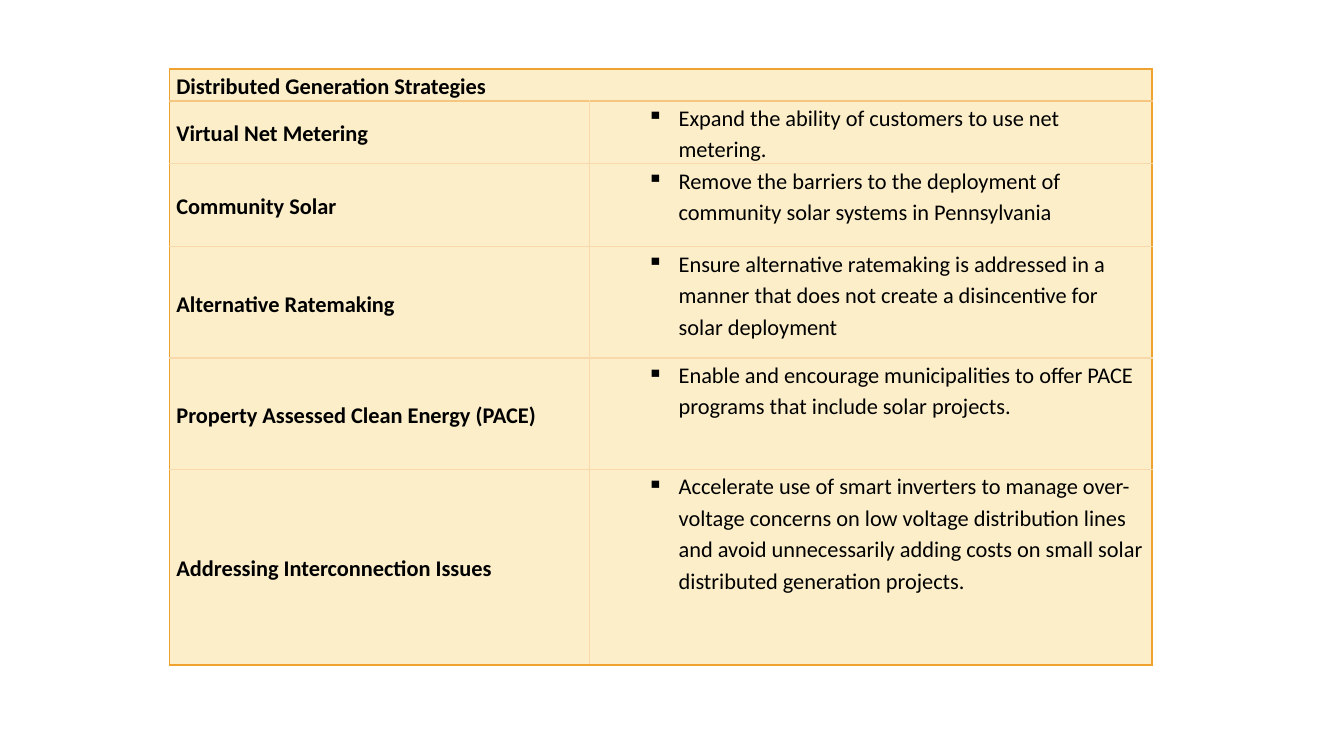
from lxml import etree
from pptx import Presentation
from pptx.dml.color import RGBColor
from pptx.enum import text
from pptx.oxml import ns
from pptx.util import Pt

COLORS = {"fill": "FBEEC9", "edge": "F0A22E", "head": "F6C681",
          "grid": "F9D9AB", "text": "000000"}
HEAD = "Distributed Generation Strategies"
ROWS = [
    ("Virtual Net Metering",
     "Expand the ability of customers to use net metering."),
    ("Community Solar",
     "Remove the barriers to the deployment of community solar systems in Pennsylvania"),
    ("Alternative Ratemaking",
     "Ensure alternative ratemaking is addressed in a manner that does not create "
     "a disincentive for solar deployment"),
    ("Property Assessed Clean Energy (PACE)",
     "Enable and encourage municipalities to offer PACE programs that include solar projects."),
    ("Addressing Interconnection Issues",
     "Accelerate use of smart inverters to manage over-voltage concerns on low voltage "
     "distribution lines and avoid unnecessarily adding costs on small solar "
     "distributed generation projects."),
]
WIDTHS = [300.3, 401.7]
HEIGHTS = [22, 44.6, 59.3, 79.5, 79.5, 139.5]


def add_bullet(para):
    para.level = 1
    props = para._p.get_or_add_pPr()
    props.set("marL", str(Pt(58.5)))
    props.set("indent", str(Pt(-22.5)))
    etree.SubElement(props, ns.qn("a:buChar")).set("char", "▪")


def write_cell(cell, words, bold, bullet=False):
    cell.margin_left = cell.margin_right = Pt(5)
    cell.margin_top = cell.margin_bottom = 0
    para = cell.text_frame.paragraphs[0]
    para.text = words
    if bullet:
        add_bullet(para)
        para.space_after = Pt(6)
    para.line_spacing = 1.15
    para.space_before = Pt(10)
    font = para.font
    font.name, font.size, font.bold = "Calibri", Pt(16), bold
    font.color.rgb = RGBColor.from_string(COLORS["text"])


def set_border(cell, sides):
    """Draw the left, right, top and bottom lines in the named colours."""
    props = cell._tc.get_or_add_tcPr()
    for place, (side, name) in enumerate(zip("LRTB", sides)):
        line = etree.Element(ns.qn("a:ln" + side))
        line.set("w", str(Pt(1 if name == "grid" else 1.5)))
        fill = etree.SubElement(line, ns.qn("a:solidFill"))
        etree.SubElement(fill, ns.qn("a:srgbClr")).set("val", COLORS[name])
        props.insert(place, line)


def style_cell(cell, row, col):
    cell.fill.solid()
    cell.fill.fore_color.rgb = RGBColor.from_string(COLORS["fill"])
    left = "edge" if col == 0 or row == 0 else "grid"
    right = "edge" if col == 1 or row == 0 else "grid"
    top = {0: "edge", 1: "head"}.get(row, "grid")
    bottom = {0: "head", len(ROWS): "edge"}.get(row, "grid")
    set_border(cell, (left, right, top, bottom))


def add_grid(slide):
    frame = slide.shapes.add_table(len(HEIGHTS), len(WIDTHS), Pt(121), Pt(49.5),
                                   Pt(sum(WIDTHS)), Pt(sum(HEIGHTS)))
    table = frame.table
    table.horz_banding = False
    table.first_row = False
    for col, width in zip(table.columns, WIDTHS):
        col.width = Pt(width)
    for row, height in zip(table.rows, HEIGHTS):
        row.height = Pt(height)
    for row in range(len(HEIGHTS)):
        for col in range(len(WIDTHS)):
            style_cell(table.cell(row, col), row, col)
    return table


def main():
    deck = Presentation()
    deck.slide_width, deck.slide_height = Pt(960), Pt(540)
    slide = deck.slides.add_slide(deck.slide_layouts[6])
    table = add_grid(slide)
    table.cell(0, 0).merge(table.cell(0, 1))
    write_cell(table.cell(0, 0), HEAD, True)
    for row, (name, goal) in enumerate(ROWS, 1):
        label = table.cell(row, 0)
        write_cell(label, name, True)
        label.vertical_anchor = text.MSO_ANCHOR.MIDDLE
        write_cell(table.cell(row, 1), goal, False, bullet=True)
    deck.save("out.pptx")


if __name__ == "__main__":
    main()
